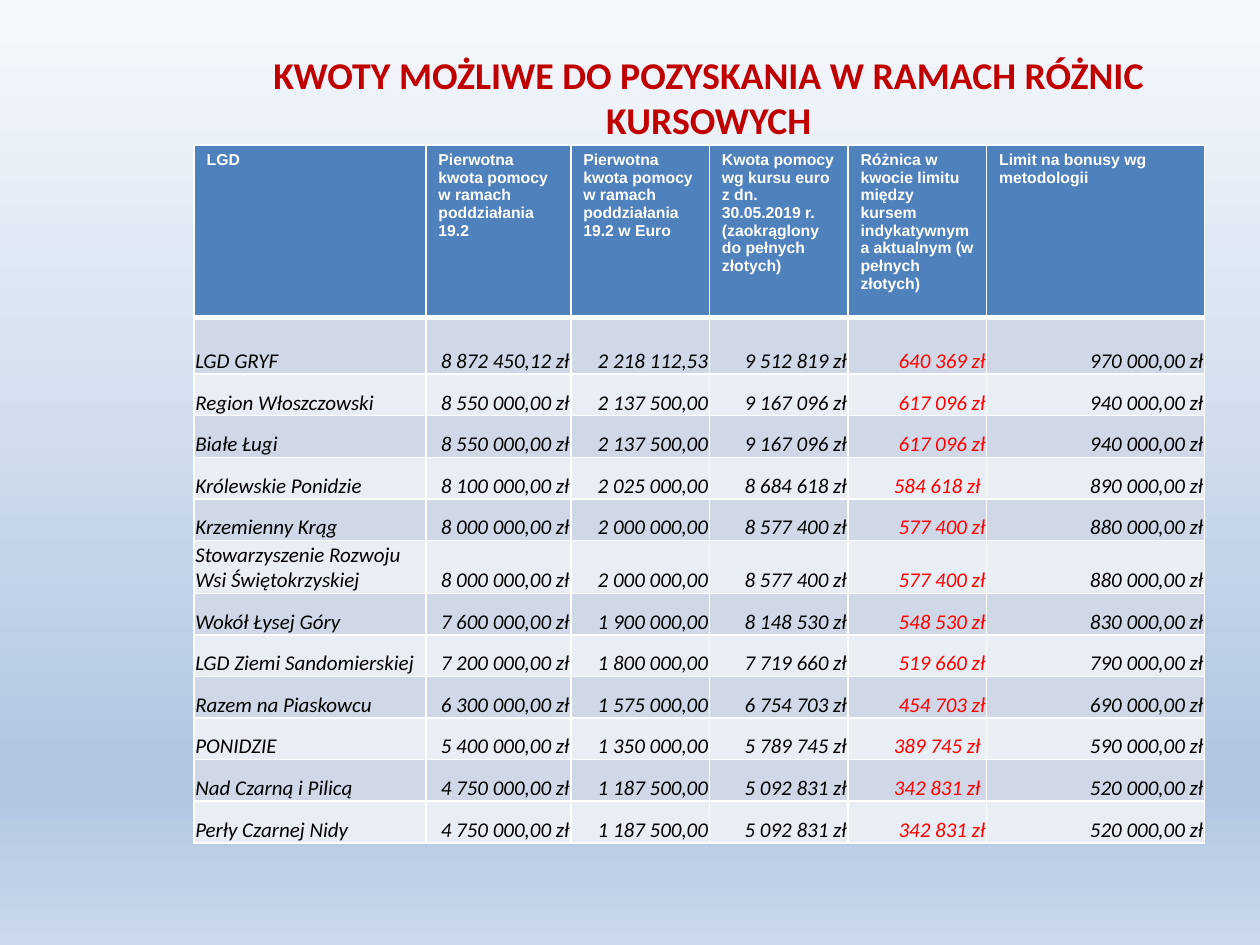
from copy import deepcopy
from lxml.etree import SubElement
from pptx import Presentation
from pptx.dml.color import RGBColor
from pptx.enum.text import MSO_ANCHOR, PP_ALIGN
from pptx.oxml.ns import qn
from pptx.util import Inches, Pt

TITLE = "KWOTY MOŻLIWE DO POZYSKANIA W RAMACH RÓŻNIC KURSOWYCH"
HEADS = [
    "LGD",
    "Pierwotna kwota pomocy w ramach poddziałania 19.2",
    "Pierwotna kwota pomocy w ramach poddziałania 19.2 w Euro",
    "Kwota pomocy wg kursu euro z dn. 30.05.2019 r. (zaokrąglony do pełnych złotych)",
    "Różnica w kwocie limitu między kursem indykatywnym a aktualnym (w pełnych złotych)",
    "Limit na bonusy wg metodologii",
]
ROWS = [
    ("LGD GRYF", "8 872 450,12 zł", "2 218 112,53", "9 512 819 zł", "640 369 zł", "970 000,00 zł"),
    ("Region Włoszczowski", "8 550 000,00 zł", "2 137 500,00", "9 167 096 zł", "617 096 zł", "940 000,00 zł"),
    ("Białe Ługi", "8 550 000,00 zł", "2 137 500,00", "9 167 096 zł", "617 096 zł", "940 000,00 zł"),
    ("Królewskie Ponidzie", "8 100 000,00 zł", "2 025 000,00", "8 684 618 zł", "584 618 zł ", "890 000,00 zł"),
    ("Krzemienny Krąg", "8 000 000,00 zł", "2 000 000,00", "8 577 400 zł", "577 400 zł", "880 000,00 zł"),
    ("Stowarzyszenie Rozwoju Wsi Świętokrzyskiej", "8 000 000,00 zł", "2 000 000,00", "8 577 400 zł",
     "577 400 zł", "880 000,00 zł"),
    ("Wokół Łysej Góry", "7 600 000,00 zł", "1 900 000,00", "8 148 530 zł", "548 530 zł", "830 000,00 zł"),
    ("LGD Ziemi Sandomierskiej", "7 200 000,00 zł", "1 800 000,00", "7 719 660 zł", "519 660 zł", "790 000,00 zł"),
    ("Razem na Piaskowcu", "6 300 000,00 zł", "1 575 000,00", "6 754 703 zł", "454 703 zł", "690 000,00 zł"),
    ("PONIDZIE", "5 400 000,00 zł", "1 350 000,00", "5 789 745 zł", "389 745 zł ", "590 000,00 zł"),
    ("Nad Czarną i Pilicą", "4 750 000,00 zł", "1 187 500,00", "5 092 831 zł", "342 831 zł ", "520 000,00 zł"),
    ("Perły Czarnej Nidy", "4 750 000,00 zł", "1 187 500,00", "5 092 831 zł", "342 831 zł", "520 000,00 zł"),
]
COLORS = {"title": "C00000", "head": "4F81BD", "odd": "D0D8E8", "even": "E9EDF4",
          "white": "FFFFFF", "text": "000000", "gain": "FF0000"}
SKY = [(0, "F6F9FC"), (0.83, "B0C6E1"), (1, "CAD9EB")]
WIDTHS = [1.84, 1.15, 1.1, 1.1, 1.1, 1.73]
HEIGHTS = [1.37, 0.45] + [0.33] * 4 + [0.42] + [0.33] * 6
GAIN = 4


def rgb(name):
    return RGBColor.from_string(COLORS[name])


def write(para, text, font, size, color, bold=False, italic=False):
    run = para.add_run()
    run.text = text
    run.font.name, run.font.size = font, Pt(size)
    run.font.bold, run.font.italic = bold, italic
    run.font.color.rgb = rgb(color)


def edge(cell, widths):
    """Draw white borders, given as points for left, right, top and bottom."""
    props = cell._tc.get_or_add_tcPr()
    for spot, (side, width) in enumerate(zip("LRTB", widths)):
        line = props.makeelement(qn(f"a:ln{side}"), {"w": str(Pt(width))})
        fill = SubElement(line, qn("a:solidFill"))
        SubElement(fill, qn("a:srgbClr"), val=COLORS["white"])
        props.insert(spot, line)


def paint(slide):
    fill = slide.background.fill
    fill.gradient()
    fill.gradient_angle = 270
    first = fill.gradient_stops[0]._gs
    first.addnext(deepcopy(first))
    for stop, (place, color) in zip(fill.gradient_stops, SKY):
        stop.position = place
        stop.color.rgb = RGBColor.from_string(color)


def add_title(slide):
    title = slide.shapes.title
    title.left, title.top = Inches(1.33), Inches(0.4)
    title.width, title.height = Inches(8.59), Inches(0.74)
    frame = title.text_frame
    frame.word_wrap = True
    frame.vertical_anchor = MSO_ANCHOR.MIDDLE
    frame.margin_top = frame.margin_bottom = 0
    para = frame.paragraphs[0]
    para.alignment = PP_ALIGN.CENTER
    write(para, TITLE, "Calibri", 21.6, "title", bold=True)


def add_grid(slide):
    grid = slide.shapes.add_table(
        len(ROWS) + 1, len(HEADS), Inches(1.54), Inches(1.15),
        Inches(sum(WIDTHS)), Inches(sum(HEIGHTS))).table
    for col, width in zip(grid.columns, WIDTHS):
        col.width = Inches(width)
    for row, height in zip(grid.rows, HEIGHTS):
        row.height = Inches(height)
    for r, texts in enumerate([HEADS] + ROWS):
        for c, text in enumerate(texts):
            cell = grid.cell(r, c)
            para = cell.text_frame.paragraphs[0]
            cell.fill.solid()
            edge(cell, (1, 1, 3 if r == 1 else 1, 3 if r == 0 else 1))
            if r == 0:
                cell.fill.fore_color.rgb = rgb("head")
                write(para, text, "Arial", 9, "white", bold=True)
                continue
            cell.fill.fore_color.rgb = rgb("odd" if r % 2 else "even")
            cell.vertical_anchor = MSO_ANCHOR.BOTTOM
            cell.margin_left = cell.margin_right = cell.margin_top = Inches(0.01)
            cell.margin_bottom = 0
            para.alignment = PP_ALIGN.RIGHT if c else PP_ALIGN.LEFT
            write(para, text, "Calibri", 12, "gain" if c == GAIN else "text", italic=True)


def main():
    deck = Presentation()
    deck.slide_width, deck.slide_height = Inches(10), Inches(7.5)
    slide = deck.slides.add_slide(deck.slide_layouts[5])
    paint(slide)
    add_title(slide)
    add_grid(slide)
    deck.save("out.pptx")


if __name__ == "__main__":
    main()
